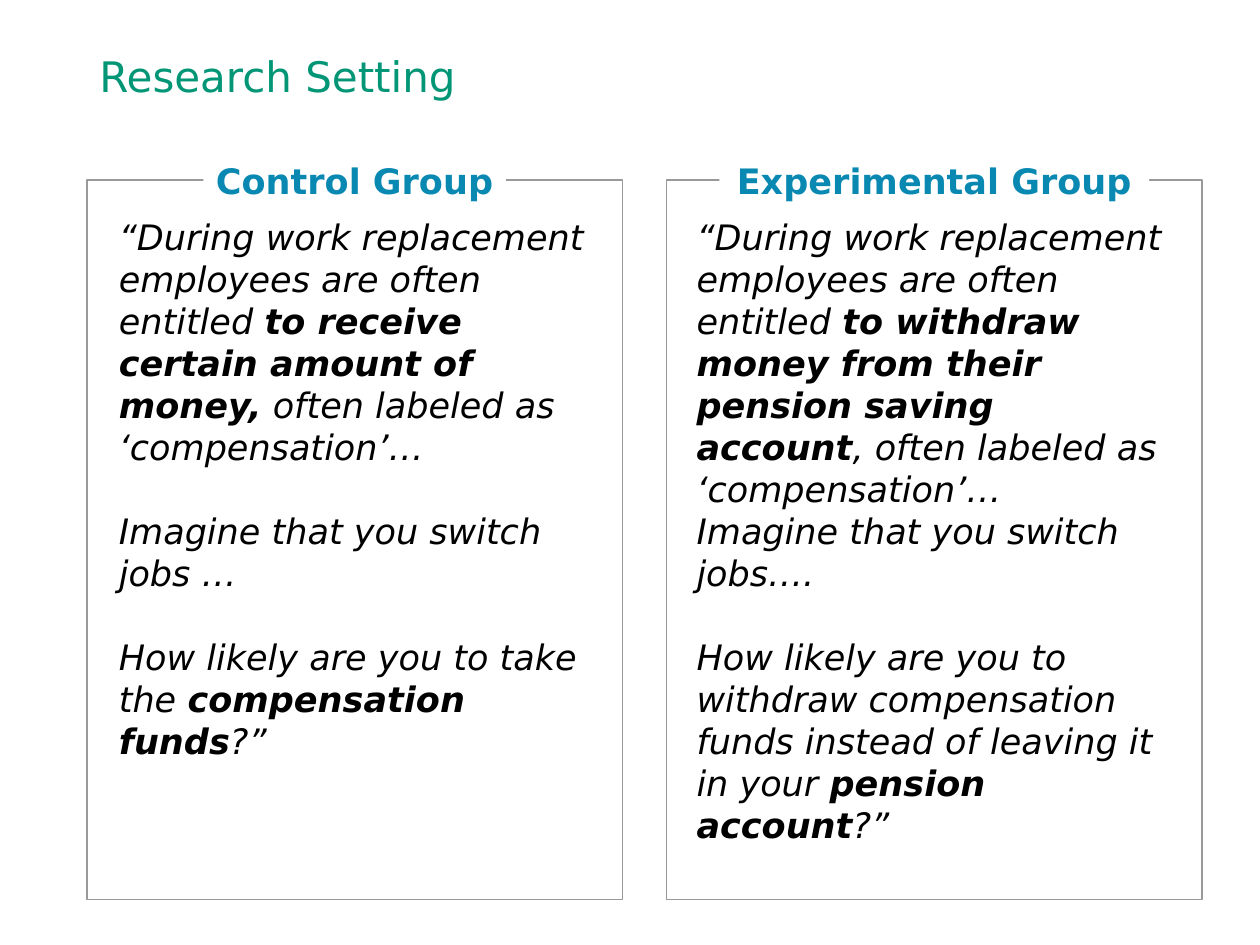
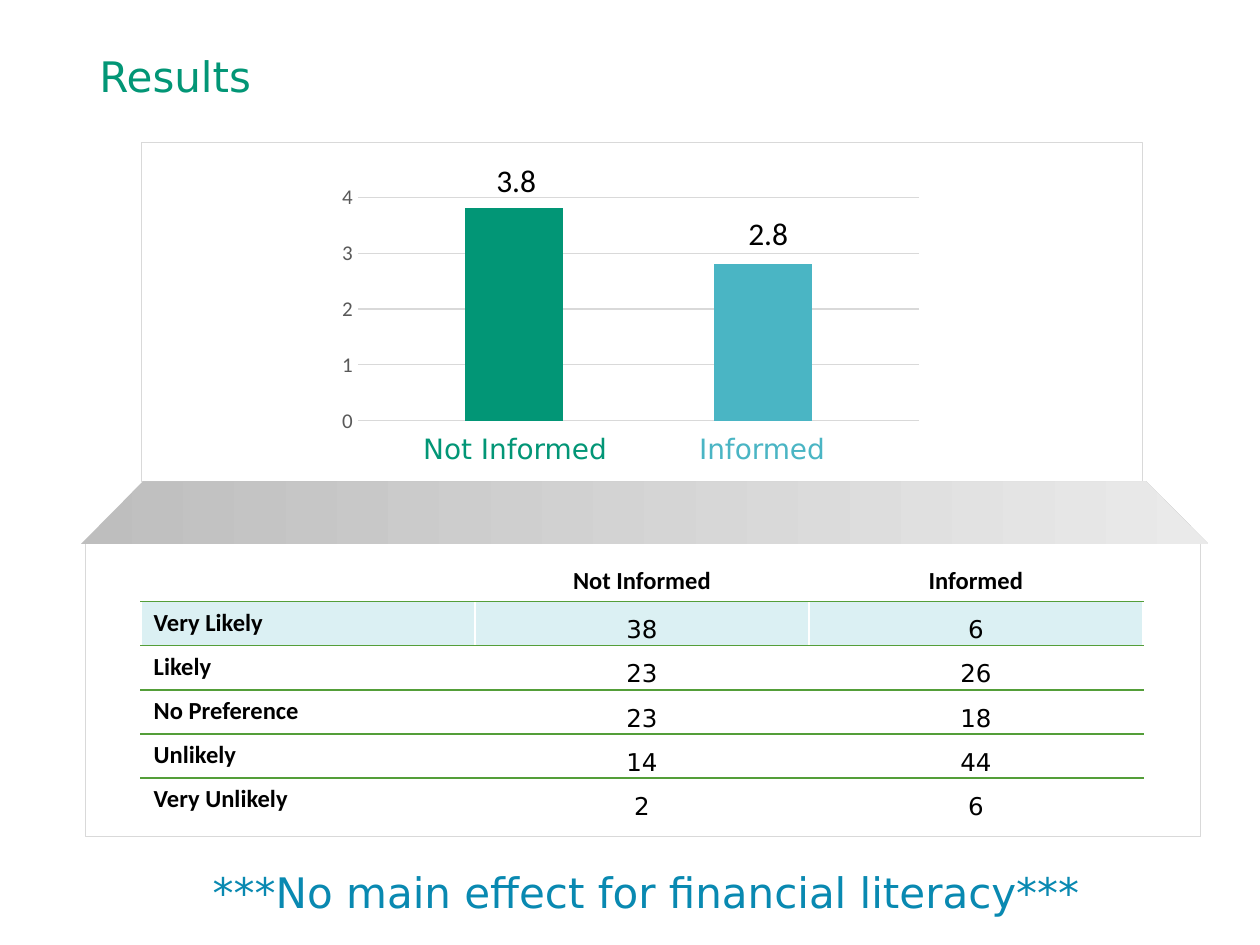
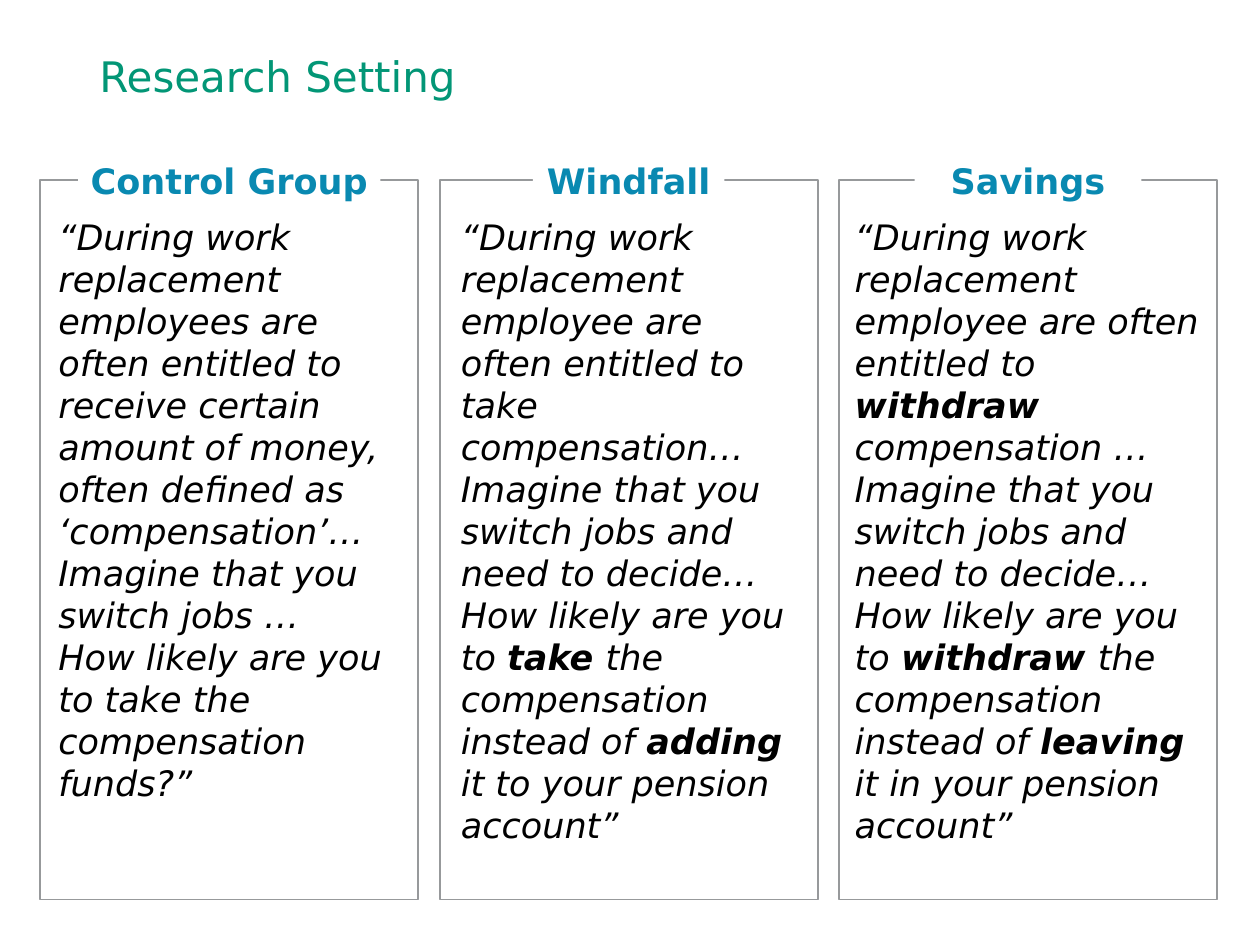
"""Build a three-slide deck on a pension compensation experiment."""
from dataclasses import dataclass

from lxml.etree import SubElement
from pptx import Presentation
from pptx.chart.data import CategoryChartData as ChartData
from pptx.dml.color import RGBColor as Color
from pptx.enum.chart import XL_CHART_TYPE as ChartType, XL_TICK_MARK as Tick
from pptx.enum.shapes import MSO_SHAPE as Shape
from pptx.enum.text import MSO_ANCHOR as Anchor, PP_ALIGN as Align
from pptx.oxml.ns import qn
from pptx.util import Inches, Pt


@dataclass(frozen=True)
class Theme:
    green: str = "029676"
    blue: str = "0989B1"
    teal: str = "4AB5C4"
    lime: str = "8AB833"
    black: str = "000000"
    white: str = "FFFFFF"
    frame: str = "97999B"
    rule: str = "D9D9D9"
    axis: str = "595959"
    table_rule: str = "549E39"
    highlight: str = "DBF0F3"
    band: tuple = ("BEBEBE", "EAEAEA")
    sans: str = "DejaVu Sans"
    narrow: str = "Calibri"
    title_size: int = 24
    body_size: int = 20
    value_size: int = 18
    name_size: int = 16
    table_size: int = 14
    axis_size: int = 12


THEME = Theme()

SETTINGS = [
    {
        "title": "Research Setting",
        "left": 0.69, "pitch": 4.6, "width": 4.25,
        "groups": [
            ("Control Group", 2.4, 3.94, [
                (0, "“During work replacement employees are often entitled *to receive "
                    "certain amount of money,* often labeled as ‘compensation’…"),
                (24, "Imagine that you switch jobs …"),
                (24, "How likely are you to take the *compensation funds*?”"),
            ]),
            ("Experimental Group", 3.41, 3.97, [
                (0, "“During work replacement employees are often entitled *to withdraw "
                    "money from their pension saving account*, often labeled as "
                    "‘compensation’…"),
                (0, "Imagine that you switch jobs…."),
                (24, "How likely are you to withdraw compensation funds instead of "
                     "leaving it in your *pension account*?”"),
            ]),
        ],
    },
    {
        "title": "Research Setting",
        "left": 0.32, "pitch": 3.17, "width": 3,
        "groups": [
            ("Control Group", 2.4, 2.91, [
                (0, "“During work replacement employees are often entitled to receive "
                    "certain amount of money, often defined as ‘compensation’…"),
                (0, "Imagine that you switch jobs …"),
                (0, "How likely are you to take the compensation funds?”"),
            ]),
            ("Windfall", 1.52, 2.86, [
                (0, "“During work replacement employee are often entitled to take "
                    "compensation… Imagine that you switch jobs and need to decide… "
                    "How likely are you to *take *the compensation instead of *adding* "
                    "it to your pension account”"),
            ]),
            ("Savings", 1.8, 2.95, [
                (0, "“During work replacement employee are often entitled to *withdraw "
                    "*compensation … Imagine that you switch jobs and need to decide… "
                    "How likely are you to *withdraw *the compensation instead of "
                    "*leaving* it in your pension account”"),
            ]),
        ],
    },
]

RESULTS_TITLE = "Results"
SERIES = [
    ("Series 1", 3.8, THEME.green),
    ("Series 2", None, THEME.lime),
    ("Series 3", 2.8, THEME.teal),
]
PLOT = {"x": 0.066, "y": 0.189, "w": 0.895, "h": 0.768}
ANSWERS = [
    ("", "Not Informed", "Informed"),
    ("Very Likely", "38", "6"),
    ("Likely", "23", "26"),
    ("No Preference", "23", "18"),
    ("Unlikely", "14", "44"),
    ("Very Unlikely", "2", "6"),
]
HIGHLIGHT_ROW = 1
CAPTIONS = [
    ("***No main effect for financial literacy***", (1.59, 6.83, 7.43, 0.5),
     THEME.title_size, THEME.sans, THEME.blue),
    ("Not Informed", (3.26, 3.38, 1.71, 0.37), THEME.name_size, THEME.sans, THEME.green),
    ("Informed", (5.45, 3.38, 1.24, 0.37), THEME.name_size, THEME.sans, THEME.teal),
    ("3.8", (3.84, 1.23, 0.52, 0.4), THEME.value_size, THEME.narrow, THEME.black),
    ("2.8", (5.84, 1.65, 0.52, 0.4), THEME.value_size, THEME.narrow, THEME.black),
]


def assign(target, **formats):
    for name, value in formats.items():
        setattr(target, name, value)


def style_font(font, size, color, name=THEME.sans, **formats):
    assign(font, size=Pt(size), name=name, **formats)
    font.color.rgb = Color.from_string(color)


def place(*lengths):
    return [Inches(length) for length in lengths]


def paint(fill, color):
    fill.solid()
    fill.fore_color.rgb = Color.from_string(color)


def write(para, text, size, color, name=THEME.sans, **formats):
    span = para.add_run()
    span.text = text
    style_font(span.font, size, color, name, **formats)


def add_text(slide, area, text, size, color, name=THEME.sans, wrap=True):
    box = slide.shapes.add_textbox(*place(*area))
    box.text_frame.word_wrap = wrap
    write(box.text_frame.paragraphs[0], text, size, color, name)
    return box.text_frame


def add_shape(slide, kind, area, fill=None, line=None, weight=1):
    shape = slide.shapes.add_shape(kind, *place(*area))
    shape.shadow.inherit = False
    if fill:
        paint(shape.fill, fill)
    else:
        shape.fill.background()
    if line:
        shape.line.color.rgb = Color.from_string(line)
        shape.line.width = Pt(weight)
    else:
        shape.line.fill.background()
    return shape


def add_slide(deck, title):
    slide = deck.slides.add_slide(deck.slide_layouts[6])
    frame = add_text(slide, (0.69, 0.4, 8.62, 0.45), title, THEME.title_size, THEME.green)
    frame.vertical_anchor = Anchor.MIDDLE
    frame.paragraphs[0].line_spacing = 0.9
    return slide


def add_group(slide, left, width, group):
    label, label_width, text_width, statements = group
    center = left + width / 2
    add_shape(slide, Shape.RECTANGLE, (left, 1.43, width, 5.71), line=THEME.frame)

    heading = add_shape(slide, Shape.RECTANGLE,
                        (center - label_width / 2, 1.1, label_width, 0.62), THEME.white)
    heading.text_frame.word_wrap = True
    heading.text_frame.vertical_anchor = Anchor.MIDDLE
    para = heading.text_frame.paragraphs[0]
    assign(para, alignment=Align.CENTER, line_spacing=1.14, space_before=Pt(6))
    write(para, label, THEME.body_size, THEME.blue, bold=True)

    box = slide.shapes.add_textbox(*place(center - text_width / 2, 1.66, text_width, 5.15))
    box.text_frame.word_wrap = True
    for index, (gap, statement) in enumerate(statements):
        para = box.text_frame.add_paragraph() if index else box.text_frame.paragraphs[0]
        para.space_before = Pt(gap)
        for part, text in enumerate(statement.split("*")):
            write(para, text, THEME.body_size, THEME.black, italic=True, bold=part % 2 == 1)


def build_setting(deck, setting):
    slide = add_slide(deck, setting["title"])
    for index, group in enumerate(setting["groups"]):
        add_group(slide, setting["left"] + index * setting["pitch"], setting["width"], group)


def add_panels(slide):
    for area in ((0.68, 4.29, 8.85, 2.35), (1.12, 1.13, 7.95, 2.69)):
        add_shape(slide, Shape.RECTANGLE, area, THEME.white, THEME.rule, 0.5)
    band = add_shape(slide, Shape.TRAPEZOID, (0.64, 3.82, 8.95, 0.5))
    band.adjustments[0] = 0.99
    band.fill.gradient()
    band.fill.gradient_angle = 0
    for stop, color in zip(band.fill.gradient_stops, THEME.band):
        stop.color.rgb = Color.from_string(color)


def add_means_chart(slide):
    data = ChartData()
    data.categories = ["1"]
    for name, value, _ in SERIES:
        data.add_series(name, [value])
    chart = slide.shapes.add_chart(ChartType.COLUMN_CLUSTERED,
                                   *place(2.51, 1.13, 4.98, 2.31), data).chart
    assign(chart, has_legend=False, has_title=False)
    style_font(chart.font, 10, THEME.black, THEME.narrow)
    assign(chart.plots[0], gap_width=219, overlap=-27, vary_by_categories=False)
    for series, (_, _, color) in zip(chart.plots[0].series, SERIES):
        paint(series.format.fill, color)

    chart.category_axis.visible = False
    axis = chart.value_axis
    assign(axis, minimum_scale=0, maximum_scale=4, major_unit=1,
           major_tick_mark=Tick.NONE, minor_tick_mark=Tick.NONE)
    axis.format.line.fill.background()
    style_font(axis.tick_labels.font, THEME.axis_size, THEME.axis, THEME.narrow)
    grid = axis.major_gridlines.format.line
    grid.color.rgb = Color.from_string(THEME.rule)
    grid.width = Pt(0.75)

    area = chart.plots[0]._element.getparent()
    for old in area.findall(qn("c:layout")):
        area.remove(old)
    layout = SubElement(area, qn("c:layout"))
    area.insert(0, layout)
    manual = SubElement(layout, qn("c:manualLayout"))
    settings = {"layoutTarget": "inner", "xMode": "edge", "yMode": "edge", **PLOT}
    for name, value in settings.items():
        SubElement(manual, qn(f"c:{name}")).set("val", str(value))


def set_borders(cell, **colors):
    properties = cell._tc.get_or_add_tcPr()
    for side, color in colors.items():
        line = SubElement(properties, qn(f"a:ln{side}"), w=str(Pt(1)))
        SubElement(SubElement(line, qn("a:solidFill")), qn("a:srgbClr"), val=color)


def fill_cell(cell, text, row, column):
    set_borders(cell, L=THEME.white, R=THEME.white,
                T=THEME.table_rule if row else THEME.white,
                B=THEME.table_rule if row < len(ANSWERS) - 1 else THEME.white)
    if row == HIGHLIGHT_ROW:
        paint(cell.fill, THEME.highlight)
    else:
        cell.fill.background()
    if not text:
        assign(cell, margin_top=0, margin_bottom=0)
        return
    para = cell.text_frame.paragraphs[0]
    is_number = row > 0 and column > 0
    if column:
        para.alignment = Align.CENTER
    if is_number:
        assign(cell, margin_left=Inches(0.07), margin_right=Inches(0.07),
               margin_top=0, margin_bottom=0)
        assign(para, line_spacing=1.5, space_before=Pt(6), space_after=Pt(6))
    write(para, text, THEME.table_size, THEME.black,
          THEME.sans if is_number else THEME.narrow, bold=not is_number)


def add_answers_table(slide):
    rows, columns = len(ANSWERS), len(ANSWERS[0])
    table = slide.shapes.add_table(rows, columns,
                                   *place(1.12, 4.44, 7.95, 0.32 * rows)).table
    assign(table, first_row=False, horz_banding=False)
    for row, values in enumerate(ANSWERS):
        for column, text in enumerate(values):
            fill_cell(table.cell(row, column), text, row, column)


def build_results(deck):
    slide = add_slide(deck, RESULTS_TITLE)
    add_panels(slide)
    add_means_chart(slide)
    add_answers_table(slide)
    for text, area, size, name, color in CAPTIONS:
        add_text(slide, area, text, size, color, name, wrap=False)


def main():
    deck = Presentation()
    assign(deck, slide_width=Inches(10), slide_height=Inches(7.5))
    build_setting(deck, SETTINGS[0])
    build_results(deck)
    build_setting(deck, SETTINGS[1])
    deck.save("out.pptx")


if __name__ == "__main__":
    main()
